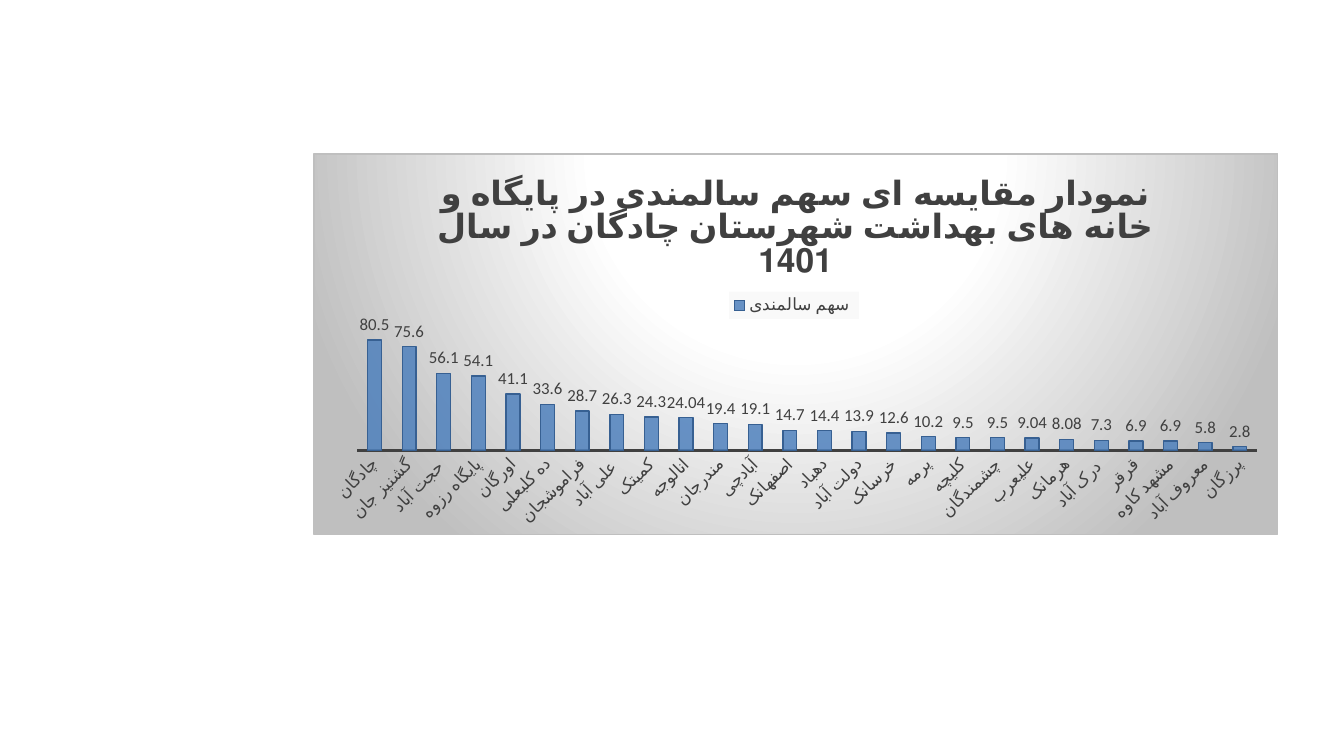
from lxml import etree
from pptx import Presentation
from pptx.chart.data import CategoryChartData
from pptx.dml.color import RGBColor
from pptx.enum import chart as chart_enum
from pptx.oxml import parse_xml
from pptx.oxml.ns import nsdecls, qn
from pptx.util import Inches, Pt

TITLE = "نمودار مقایسه ای سهم سالمندی در پایگاه و خانه های بهداشت شهرستان چادگان در سال 1401"
SERIES_NAME = "سهم سالمندی "
ELDERLY_SHARE = [
    ("چادگان", 80.5), ("گشنیز جان", 75.6), ("حجت آباد ", 56.1),
    ("پایگاه رزوه", 54.1), ("اورگان", 41.1), ("ده کلبعلی", 33.6),
    ("فراموشجان", 28.7), ("علی آباد ", 26.3), ("کمیتک", 24.3),
    ("انالوجه", 24.04), ("مندرجان", 19.4), ("آبادچی", 19.1),
    ("اصفهانک", 14.7), ("دهباد", 14.4), ("دولت آباد", 13.9),
    ("خرسانک", 12.6), ("پرمه", 10.2), ("کلیچه", 9.5),
    ("چشمندگان", 9.5), ("علیعرب", 9.04), ("هرمانک", 8.08),
    ("درک آباد ", 7.3), ("قرقر", 6.9), ("مشهد کاوه", 6.9),
    ("معروف آباد", 5.8), ("پرزگان", 2.8),
]
DARK = "404040"
BACKGROUND_STOPS = [(0, "FFFFFF"), (39, "FFFFFF"), (100, "BFBFBF")]
# Percent of the chart's width and height
PLOT_LAYOUT = {"x": 4.5, "y": 45.5, "w": 93.4, "h": 32.5}
LEGEND_LAYOUT = {"x": 43.1, "y": 36.2}


def color(hex_text):
    return RGBColor.from_string(hex_text)


def style_font(font, size, bold=False):
    font.name = "Calibri"
    font.size = Pt(size)
    font.bold = bold
    font.color.rgb = color(DARK)


def style_line(line, hex_text, width):
    line.color.rgb = color(hex_text)
    line.width = Pt(width)


def shape_properties(content):
    return parse_xml(f'<c:spPr {nsdecls("c", "a")}>{content}</c:spPr>')


def solid_fill(hex_text, alpha=100):
    return (f'<a:solidFill><a:srgbClr val="{hex_text}">'
            f'<a:alpha val="{alpha * 1000}"/></a:srgbClr></a:solidFill>')


def place(element, index, percents, target=""):
    """Give a chart part a manual layout, as its child number index."""
    for layout in element.findall(qn("c:layout")):
        element.remove(layout)
    modes = "".join(f'<c:{axis}Mode val="edge"/>' for axis in "xy")
    values = "".join(f'<c:{name} val="{percent / 100:.3f}"/>' for name, percent in percents.items())
    element.insert(index, parse_xml(
        f'<c:layout {nsdecls("c")}><c:manualLayout>{target}{modes}{values}'
        '</c:manualLayout></c:layout>'))


presentation = Presentation()
presentation.slide_width = Inches(10)
presentation.slide_height = Inches(10 * 9 / 16)
slide = presentation.slides.add_slide(presentation.slide_layouts[6])

data = CategoryChartData()
data.categories = [village for village, share in ELDERLY_SHARE]
data.add_series(SERIES_NAME, [share for village, share in ELDERLY_SHARE])
chart = slide.shapes.add_chart(
    chart_enum.XL_CHART_TYPE.COLUMN_CLUSTERED,
    Inches(2.33), Inches(1.14), Inches(7.18), Inches(2.84), data).chart
chart.font.name = "Calibri"
chart.font.size = Pt(10)
chart.font.color.rgb = color("000000")

# Title and legend
title_frame = chart.chart_title.text_frame
title_frame.text = TITLE
style_font(title_frame.paragraphs[0].font, 18, bold=True)
chart.chart_title.include_in_layout = False

chart.has_legend = True
legend = chart.legend
legend.position = chart_enum.XL_LEGEND_POSITION.TOP
legend.include_in_layout = False
style_font(legend.font, 9)
legend._element.find(qn("c:overlay")).addnext(shape_properties(solid_fill("F2F2F2", 39)))
place(legend._element, 1, LEGEND_LAYOUT)

# Axes
category_axis = chart.category_axis
category_axis.major_tick_mark = chart_enum.XL_TICK_MARK.NONE
category_axis.minor_tick_mark = chart_enum.XL_TICK_MARK.NONE
style_font(category_axis.tick_labels.font, 9)
style_line(category_axis.format.line, DARK, 1.5)
category_axis._element.find(f'{qn("c:txPr")}/{qn("a:bodyPr")}').set("rot", "-2700000")

value_axis = chart.value_axis
value_axis.minimum_scale = 0
value_axis.maximum_scale = 90
value_axis.has_major_gridlines = False
value_axis.visible = False

# Columns and their labels
plot = chart.plots[0]
plot.gap_width = 150
plot.vary_by_categories = False
columns = plot.series[0].format
columns.fill.solid()
columns.fill.fore_color.rgb = color("4F81BD")
column_color = plot.series[0]._element.find(f'{qn("c:spPr")}/{qn("a:solidFill")}/{qn("a:srgbClr")}')
etree.SubElement(column_color, qn("a:alpha")).set("val", "85000")
style_line(columns.line, "376092", 0.75)

plot.has_data_labels = True
labels = plot.data_labels
labels.show_value = True
labels.position = chart_enum.XL_LABEL_POSITION.OUTSIDE_END
style_font(labels.font, 9)

plot_area = chart._chartSpace.find(f'{qn("c:chart")}/{qn("c:plotArea")}')
place(plot_area, 0, PLOT_LAYOUT, '<c:layoutTarget val="inner"/>')

# Chart background
stops = "".join(f'<a:gs pos="{position * 1000}"><a:srgbClr val="{hex_text}"/></a:gs>'
                for position, hex_text in BACKGROUND_STOPS)
chart._chartSpace.find(qn("c:chart")).addnext(shape_properties(
    f'<a:gradFill><a:gsLst>{stops}</a:gsLst><a:path path="circle">'
    '<a:fillToRect l="50000" t="-80000" r="50000" b="180000"/></a:path></a:gradFill>'
    f'<a:ln w="{Pt(0.75)}">{solid_fill("BFBFBF")}</a:ln>'))

presentation.save("out.pptx")
